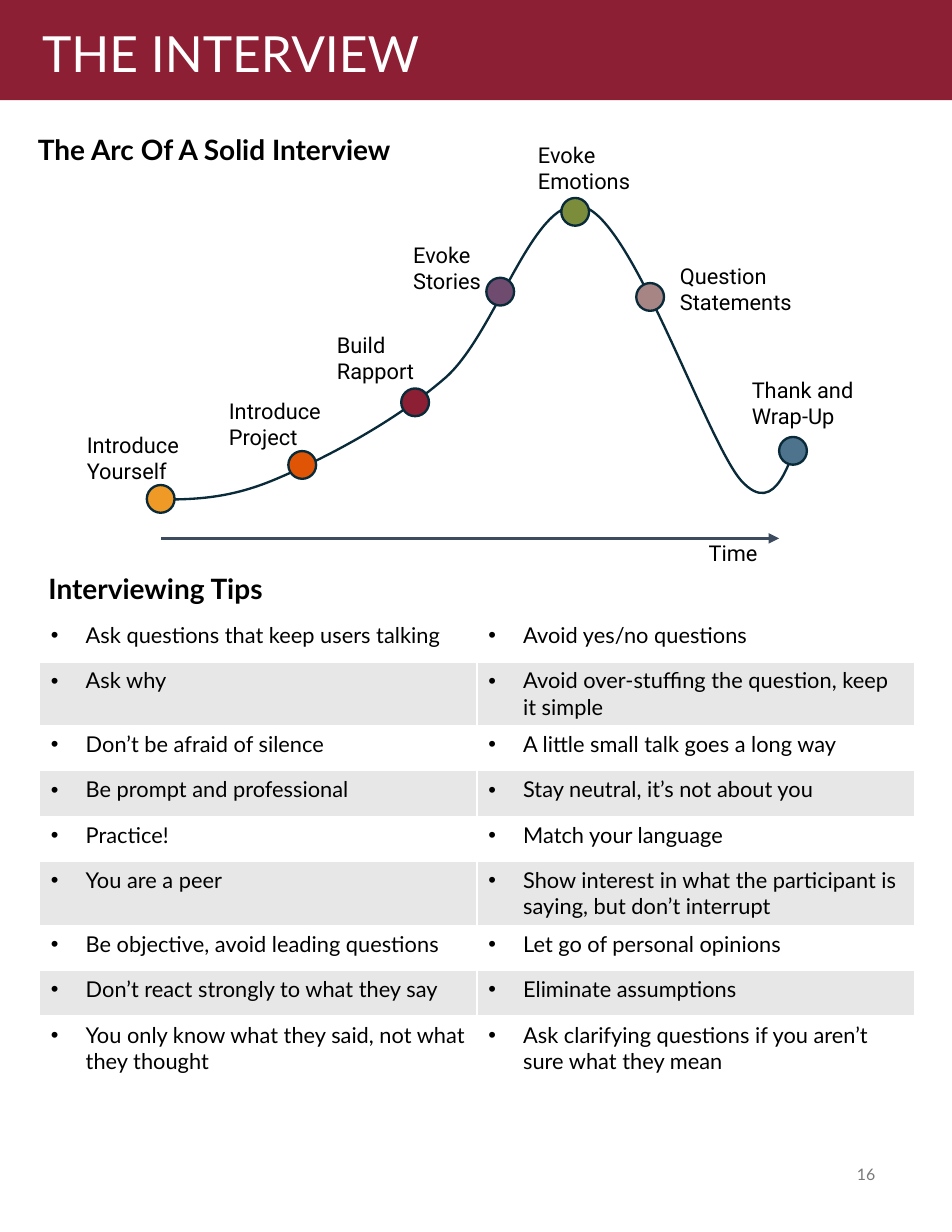
from dataclasses import dataclass

from lxml import etree
from pptx import Presentation
from pptx.dml.color import RGBColor
from pptx.enum.shapes import MSO_CONNECTOR, MSO_SHAPE
from pptx.enum.text import MSO_ANCHOR, MSO_AUTO_SIZE, PP_ALIGN
from pptx.oxml.ns import qn
from pptx.util import Cm, Pt

STRAIGHT = MSO_CONNECTOR.STRAIGHT
RECTANGLE, OVAL = MSO_SHAPE.RECTANGLE, MSO_SHAPE.OVAL
LEFT, RIGHT = PP_ALIGN.LEFT, PP_ALIGN.RIGHT
TOP, MIDDLE = MSO_ANCHOR.TOP, MSO_ANCHOR.MIDDLE
TITLE_ONLY = 5


@dataclass(frozen=True)
class Theme:
    crimson: str = "8C1F34"
    white: str = "FFFFFF"
    black: str = "000000"
    outline: str = "092A39"
    axis: str = "3C4B5E"
    band: str = "E7E7E7"
    muted: str = "797979"
    main_font: str = "Lato"
    label_font: str = "Roboto"
    title_size: float = 32
    heading_size: float = 18
    body_size: float = 14
    number_size: float = 10.2


THEME = Theme()
TITLE = {"name": THEME.main_font, "size": Pt(THEME.title_size), "color": THEME.white}
HEADING = {"name": THEME.main_font, "size": Pt(THEME.heading_size), "bold": True}
LABEL = {"name": THEME.label_font, "size": Pt(THEME.body_size)}
BODY = {"name": THEME.main_font, "size": Pt(THEME.body_size)}
NUMBER = {"name": THEME.main_font, "size": Pt(THEME.number_size), "color": THEME.muted}

# label, label left, top, width, dot left, top, dot colour
MILESTONES = [
    ("Introduce Yourself", 1.72, 9.67, 2.72, 3.33, 11.0, "EF9927"),
    ("Introduce Project", 4.94, 8.89, 2.72, 6.54, 10.23, "E05406"),
    ("Build Rapport", 7.39, 7.39, 2.72, 9.1, 8.81, THEME.crimson),
    ("Evoke Stories", 9.12, 5.36, 2.72, 11.03, 6.3, "6F4B6F"),
    ("Evoke Emotions", 11.95, 3.09, 2.72, 12.73, 4.49, "7B8D3B"),
    ("Question Statements", 15.17, 5.84, 3.28, 14.43, 6.42, "A78584"),
    ("Thank and Wrap-Up", 16.8, 8.41, 3.28, 17.67, 9.91, "4E738D"),
]
DOT_SIZE = 0.63

# Start point, then two control points and an end point for each cubic segment
ARC = [
    (3.51, 11.33),
    (4.34, 11.33), (5.16, 11.33), (6.25, 10.87),
    (7.34, 10.41), (8.94, 9.58), (10.11, 8.56),
    (11.28, 7.52), (12.14, 4.29), (13.26, 4.7),
    (14.38, 5.08), (16.03, 10.01), (16.81, 10.9),
    (17.63, 11.81), (17.93, 10.24), (18.08, 10.11),
    (18.24, 9.98), (17.98, 10.08), (17.73, 10.19),
]

TIPS = [
    ("Ask questions that keep users talking", "Avoid yes/no questions"),
    ("Ask why", "Avoid over-stuffing the question, keep it simple"),
    ("Don’t be afraid of silence", "A little small talk goes a long way"),
    ("Be prompt and professional", "Stay neutral, it’s not about you"),
    ("Practice!", "Match your language"),
    ("You are a peer", "Show interest in what the participant is saying, but don’t interrupt"),
    ("Be objective, avoid leading questions", "Let go of personal opinions"),
    ("Don’t react strongly to what they say", "Eliminate assumptions"),
    ("You only know what they said, not what they thought",
     "Ask clarifying questions if you aren’t sure what they mean"),
]


class SlideBuilder:
    def __init__(self, slide, theme):
        self.slide, self.theme = slide, theme
        self.shapes = slide.shapes

    def format_text(self, paragraph, text, style, align=LEFT):
        paragraph.alignment = align
        run = paragraph.add_run()
        run.text = text
        values = {"color": self.theme.black, **style}
        run.font.color.rgb = RGBColor.from_string(values.pop("color"))
        for name, value in values.items():
            setattr(run.font, name, value)

    def fill_frame(self, frame, text, style, align=LEFT, anchor=TOP):
        settings = {"word_wrap": True, "auto_size": MSO_AUTO_SIZE.NONE, "vertical_anchor": anchor}
        for name, value in settings.items():
            setattr(frame, name, value)
        self.format_text(frame.paragraphs[0], text, style, align)

    def title(self, text, left, top, width, height):
        title = self.shapes.title
        box = {"left": left, "top": top, "width": width, "height": height}
        for name, value in box.items():
            setattr(title, name, Cm(value))
        self.fill_frame(title.text_frame, text, TITLE, anchor=MIDDLE)
        title.element.getparent().append(title.element)  # in front of the banner

    def text(self, text, left, top, width, height, style, **placing):
        box = self.shapes.add_textbox(Cm(left), Cm(top), Cm(width), Cm(height))
        self.fill_frame(box.text_frame, text, style, **placing)

    def set_line(self, line, color, width):
        line.color.rgb = RGBColor.from_string(color)
        line.width = Pt(width)

    def shape(self, kind, left, top, width, height, fill, outlined=False):
        shape = self.shapes.add_shape(kind, Cm(left), Cm(top), Cm(width), Cm(height))
        shape.shadow.inherit = False
        shape.fill.solid()
        shape.fill.fore_color.rgb = RGBColor.from_string(fill)
        if outlined:
            self.set_line(shape.line, self.theme.outline, 1.5)
        else:
            shape.line.fill.background()

    def curve(self, points):
        """Draw a freeform through every third point, then bend its lines into cubics."""
        points = [(Cm(x), Cm(y)) for x, y in points]
        builder = self.shapes.build_freeform(*points[0])
        builder.add_line_segments(points[3::3], close=False)
        curve = builder.convert_to_shape()
        for index, segment in enumerate(list(curve.element.iter(qn("a:lnTo")))):
            segment.tag = qn("a:cubicBezTo")
            segment.remove(segment[0])
            for x, y in points[3 * index + 1:3 * index + 4]:
                etree.SubElement(segment, qn("a:pt"), x=str(x - curve.left), y=str(y - curve.top))
        curve.shadow.inherit = False
        curve.fill.background()
        self.set_line(curve.line, self.theme.outline, 1.5)

    def arrow(self, start_x, start_y, end_x, end_y):
        arrow = self.shapes.add_connector(
            STRAIGHT, Cm(start_x), Cm(start_y), Cm(end_x), Cm(end_y))
        self.set_line(arrow.line, self.theme.axis, 2.25)
        properties = arrow.element.spPr
        etree.SubElement(properties.find(qn("a:ln")), qn("a:tailEnd"), type="triangle")
        etree.SubElement(properties, qn("a:effectLst"))

    def bullet(self, paragraph, indent=0.79):
        properties = paragraph._p.get_or_add_pPr()
        properties.set("marL", str(Cm(indent)))
        properties.set("indent", str(-Cm(indent)))
        etree.SubElement(properties, qn("a:buFont"), typeface="Arial")
        etree.SubElement(properties, qn("a:buChar"), char="•")

    def borders(self, cell):
        properties = cell._tc.get_or_add_tcPr()
        for side in ("a:lnL", "a:lnR", "a:lnT", "a:lnB"):
            line = etree.SubElement(properties, qn(side), w=str(Pt(1)))
            fill = etree.SubElement(line, qn("a:solidFill"))
            etree.SubElement(fill, qn("a:srgbClr"), val=self.theme.white)

    def table(self, rows, left, top, width, row_height):
        table = self.shapes.add_table(
            len(rows), len(rows[0]), Cm(left), Cm(top), Cm(width),
            Cm(row_height * len(rows))).table
        table.first_row = table.horz_banding = False
        for row_index, texts in enumerate(rows):
            fill = self.theme.band if row_index % 2 else self.theme.white
            for column_index, text in enumerate(texts):
                cell = table.cell(row_index, column_index)
                self.borders(cell)
                cell.fill.solid()
                cell.fill.fore_color.rgb = RGBColor.from_string(fill)
                paragraph = cell.text_frame.paragraphs[0]
                self.format_text(paragraph, text, BODY)
                self.bullet(paragraph)


def main():
    presentation = Presentation()
    presentation.slide_width, presentation.slide_height = Cm(21.59), Cm(27.94)
    slide = presentation.slides.add_slide(presentation.slide_layouts[TITLE_ONLY])
    builder = SlideBuilder(slide, THEME)

    builder.shape(RECTANGLE, 0, -0.05, 21.59, 2.32, THEME.crimson)
    builder.title("THE INTERVIEW", 0.7, 0.38, 19.71, 1.63)

    builder.text("The Arc Of A Solid Interview", 0.61, 2.88, 8.89, 1.02, HEADING)
    builder.curve(ARC)
    for label, left, top, width, *_ in MILESTONES:
        builder.text(label, left, top, width, 1.45, LABEL)
    for *_, left, top, color in MILESTONES:
        builder.shape(OVAL, left, top, DOT_SIZE, DOT_SIZE, color, outlined=True)
    builder.arrow(3.66, 12.21, 17.67, 12.21)
    builder.text("Time", 15.82, 12.12, 2.31, 0.86, LABEL)

    builder.text("Interviewing Tips", 0.85, 12.83, 8.89, 1.02, HEADING)
    builder.table(TIPS, 0.9, 13.98, 19.84, 1.03)
    builder.text("16", 15.25, 25.89, 4.85, 1.5, NUMBER, align=RIGHT, anchor=MIDDLE)

    presentation.save("out.pptx")


if __name__ == "__main__":
    main()
